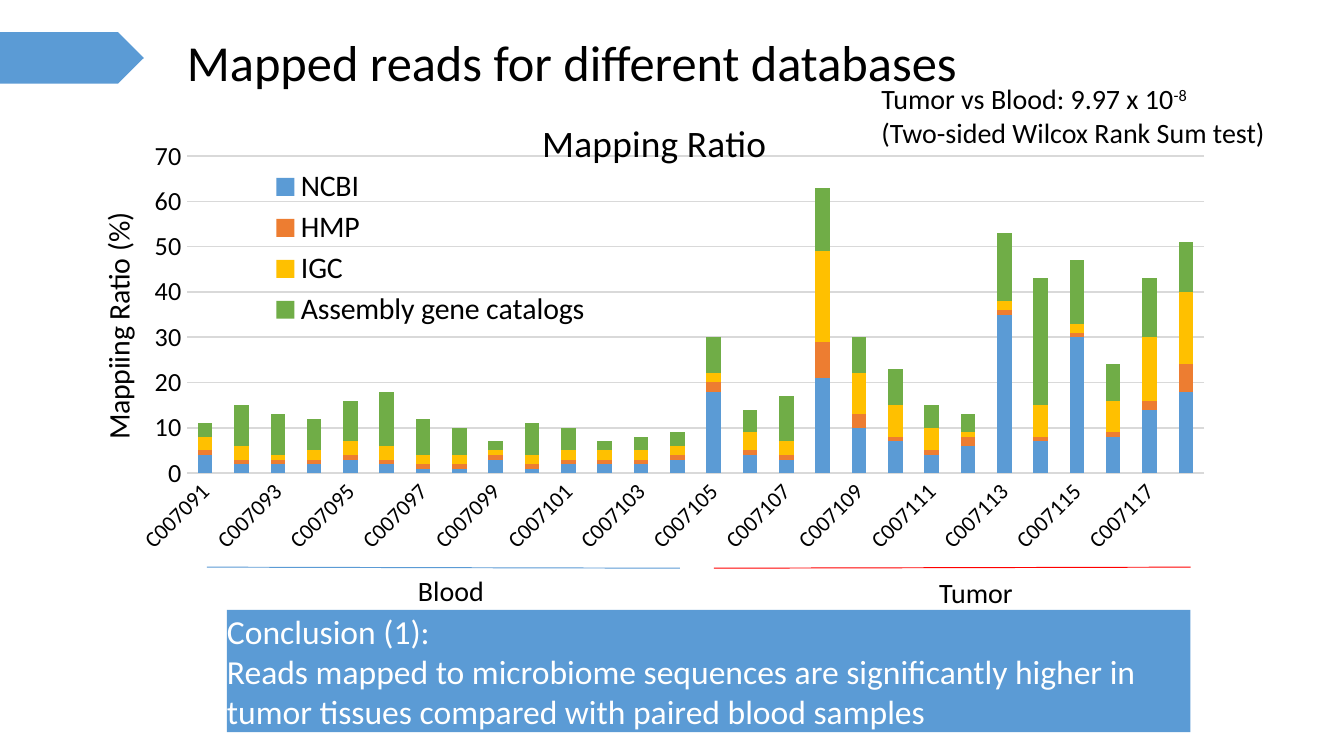
from dataclasses import dataclass
from typing import Optional

from lxml import etree
from pptx import Presentation
from pptx.chart.data import CategoryChartData
from pptx.dml.color import RGBColor
from pptx.enum.chart import XL_CHART_TYPE, XL_LEGEND_POSITION, XL_TICK_MARK
from pptx.enum.shapes import MSO_CONNECTOR, MSO_SHAPE
from pptx.enum.text import MSO_ANCHOR, MSO_AUTO_SIZE, PP_ALIGN
from pptx.oxml.ns import qn
from pptx.util import Cm, Pt

RECTANGLE, PENTAGON = MSO_SHAPE.RECTANGLE, MSO_SHAPE.PENTAGON
STRAIGHT = MSO_CONNECTOR.STRAIGHT
STACKED = XL_CHART_TYPE.COLUMN_STACKED
LEGEND_BOTTOM = XL_LEGEND_POSITION.BOTTOM
NO_TICK = XL_TICK_MARK.NONE
TOP, MIDDLE, LEFT = MSO_ANCHOR.TOP, MSO_ANCHOR.MIDDLE, PP_ALIGN.LEFT
NO_AUTOSIZE = MSO_AUTO_SIZE.NONE

BLACK = RGBColor(0x00, 0x00, 0x00)
WHITE = RGBColor(0xFF, 0xFF, 0xFF)
BLUE = RGBColor(0x5B, 0x9B, 0xD5)
ORANGE = RGBColor(0xED, 0x7D, 0x31)
YELLOW = RGBColor(0xFF, 0xC0, 0x00)
GREEN = RGBColor(0x70, 0xAD, 0x47)
RED = RGBColor(0xFF, 0x00, 0x00)
GRAY = RGBColor(0xD9, 0xD9, 0xD9)
FONT = "Calibri"


@dataclass
class Frame:
    """Position and size in centimetres."""
    left: float
    top: float
    width: float
    height: float

    def lengths(self) -> tuple:
        return tuple(Cm(v) for v in (self.left, self.top, self.width, self.height))


@dataclass
class Database:
    name: str
    color: RGBColor
    ratios: tuple


@dataclass
class Group:
    """A range of samples: its line and its label."""
    name: str
    color: RGBColor
    start: tuple
    end: tuple
    label: Frame


SAMPLES = [f"C{number:06d}" for number in range(7091, 7119)]
DATABASES = [
    Database("NCBI", BLUE, (4, 2, 2, 2, 3, 2, 1, 1, 3, 1, 2, 2, 2, 3,
                            18, 4, 3, 21, 10, 7, 4, 6, 35, 7, 30, 8, 14, 18)),
    Database("HMP", ORANGE, (1, 1, 1, 1, 1, 1, 1, 1, 1, 1, 1, 1, 1, 1,
                             2, 1, 1, 8, 3, 1, 1, 2, 1, 1, 1, 1, 2, 6)),
    Database("IGC", YELLOW, (3, 3, 1, 2, 3, 3, 2, 2, 1, 2, 2, 2, 2, 2,
                             2, 4, 3, 20, 9, 7, 5, 1, 2, 7, 2, 7, 14, 16)),
    Database("Assembly gene catalogs", GREEN,
             (3, 9, 9, 7, 9, 12, 8, 6, 2, 7, 5, 2, 3, 3,
              8, 5, 10, 14, 8, 8, 5, 4, 15, 28, 14, 8, 13, 11)),
]
GROUPS = [
    Group("Blood", BLUE, (3.91, 10.72), (12.85, 10.74), Frame(7.65, 10.72, 3.53, 0.89)),
    Group("Tumor", RED, (13.49, 10.74), (22.5, 10.72), Frame(17.5, 10.74, 3.53, 0.89)),
]


def set_font(font, size: float, color: RGBColor = BLACK) -> None:
    for name, value in {"name": FONT, "size": Pt(size), "bold": False}.items():
        setattr(font, name, value)
    font.color.rgb = color


def write(box, lines: list, size: float, color: RGBColor = BLACK,
          anchor=TOP, inset: tuple = (0.25, 0.13)) -> None:
    """Each line is a list of (text, is_superscript) pairs."""
    frame = box.text_frame
    across, down = (Cm(v) for v in inset)
    settings = {"word_wrap": True, "auto_size": NO_AUTOSIZE, "vertical_anchor": anchor,
                "margin_left": across, "margin_right": across,
                "margin_top": down, "margin_bottom": down}
    for name, value in settings.items():
        setattr(frame, name, value)
    for index, line in enumerate(lines):
        para = frame.add_paragraph() if index else frame.paragraphs[0]
        para.alignment = LEFT
        for text, is_superscript in line:
            span = para.add_run()
            span.text = text
            set_font(span.font, size, color)
            if is_superscript:
                span._r.get_or_add_rPr().set("baseline", "30000")


def add_block(page, kind, frame: Frame, fill: RGBColor):
    block = page.shapes.add_shape(kind, *frame.lengths())
    block.shadow.inherit = False
    block.fill.solid()
    block.fill.fore_color.rgb = fill
    block.line.fill.background()
    return block


def add_group(page, group: Group) -> None:
    ends = [Cm(v) for v in group.start + group.end]
    line = page.shapes.add_connector(STRAIGHT, *ends)
    line.line.color.rgb = group.color
    line.line.width = Pt(0.5)
    etree.SubElement(line._element.spPr, qn("a:effectLst"))
    label = page.shapes.add_textbox(*group.label.lengths())
    write(label, [[(group.name, False)]], 15)


def place(element, index: int, x: float, y: float, w: Optional[float] = None,
          h: Optional[float] = None, inner: bool = False) -> None:
    """Give a chart part a manual layout, in fractions of the chart."""
    for old in element.findall(qn("c:layout")):
        element.remove(old)
    layout = etree.Element(qn("c:layout"))
    manual = etree.SubElement(layout, qn("c:manualLayout"))
    values = {"layoutTarget": "inner" if inner else None, "xMode": "edge",
              "yMode": "edge", "x": x, "y": y, "w": w, "h": h}
    for name, value in values.items():
        if value is not None:
            etree.SubElement(manual, qn(f"c:{name}")).set("val", str(value))
    element.insert(index, layout)


def set_title(title, text: str, size: float, x: float, y: float) -> None:
    title.text_frame.text = text
    set_font(title.text_frame.paragraphs[0].runs[0].font, size)
    place(title._element, 1, x, y)


def add_ratio_chart(page, frame: Frame) -> None:
    data = CategoryChartData()
    data.categories = SAMPLES
    for database in DATABASES:
        data.add_series(database.name, database.ratios)
    chart = page.shapes.add_chart(STACKED, *frame.lengths(), data).chart
    set_font(chart.font, 10)
    chart.has_title = True
    set_title(chart.chart_title, "Mapping Ratio", 20, 0.41, 0.15)

    # Columns
    plot = chart.plots[0]
    for name, value in {"gap_width": 150, "overlap": 100, "vary_by_categories": False}.items():
        setattr(plot, name, value)
    for series, database in zip(plot.series, DATABASES):
        series.format.fill.solid()
        series.format.fill.fore_color.rgb = database.color
    place(chart._chartSpace.chart.plotArea, 0, 0.111, 0.235, 0.873, 0.583, inner=True)

    # Axes
    samples, ratios = chart.category_axis, chart.value_axis
    for axis, size in ((samples, 12), (ratios, 14)):
        axis.major_tick_mark = axis.minor_tick_mark = NO_TICK
        set_font(axis.tick_labels.font, size)
    samples._element.txPr.find(qn("a:bodyPr")).set("rot", "-2700000")
    ratios.minimum_scale, ratios.maximum_scale, ratios.major_unit = 0, 70, 10
    ratios.format.line.fill.background()
    for line in (samples.format.line, ratios.major_gridlines.format.line):
        line.color.rgb = GRAY
        line.width = Pt(0.75)
    set_title(ratios.axis_title, "Mappiing Ratio (%)", 16, 0.03, 0.33)

    # Legend
    chart.has_legend = True
    chart.legend.position = LEGEND_BOTTOM
    chart.legend.include_in_layout = False
    set_font(chart.legend.font, 16)
    place(chart.legend._element, 1, 0.17, 0.25, 0.3, 0.31)


def main() -> None:
    deck = Presentation()
    deck.slide_width, deck.slide_height = Cm(25.4), Cm(14.29)
    page = deck.slides.add_slide(deck.slide_layouts[5])

    add_ratio_chart(page, Frame(1.09, 0.53, 22.02, 10.29))

    # Test result
    result = add_block(page, RECTANGLE, Frame(16.66, 1.55, 7.49, 1.27), WHITE)
    write(result, [[("Tumor vs Blood: 9.97 x 10", False), ("-8", True)],
                   [("(Two-sided Wilcox Rank Sum test)", False)]],
          15, anchor=MIDDLE, inset=(0, 0))

    # Heading, in front of the chart
    add_block(page, PENTAGON, Frame(0, 0.61, 2.72, 0.97), BLUE)
    title = page.shapes.title
    title.left, title.top, title.width, title.height = Frame(3.28, 0.46, 20.85, 1.42).lengths()
    write(title, [[("Mapped reads for different databases", False)]], 27)
    title._element.getparent().append(title._element)

    for group in GROUPS:
        add_group(page, group)

    # Conclusion
    conclusion = add_block(page, RECTANGLE, Frame(4.29, 11.53, 18.21, 2.31), BLUE)
    write(conclusion, [[("Conclusion (1):", False)],
                       [("Reads mapped to microbiome sequences are significantly higher in "
                         "tumor tissues compared with paired blood samples", False)]],
          18, WHITE, MIDDLE, (0, 0))

    deck.save("out.pptx")


if __name__ == "__main__":
    main()
